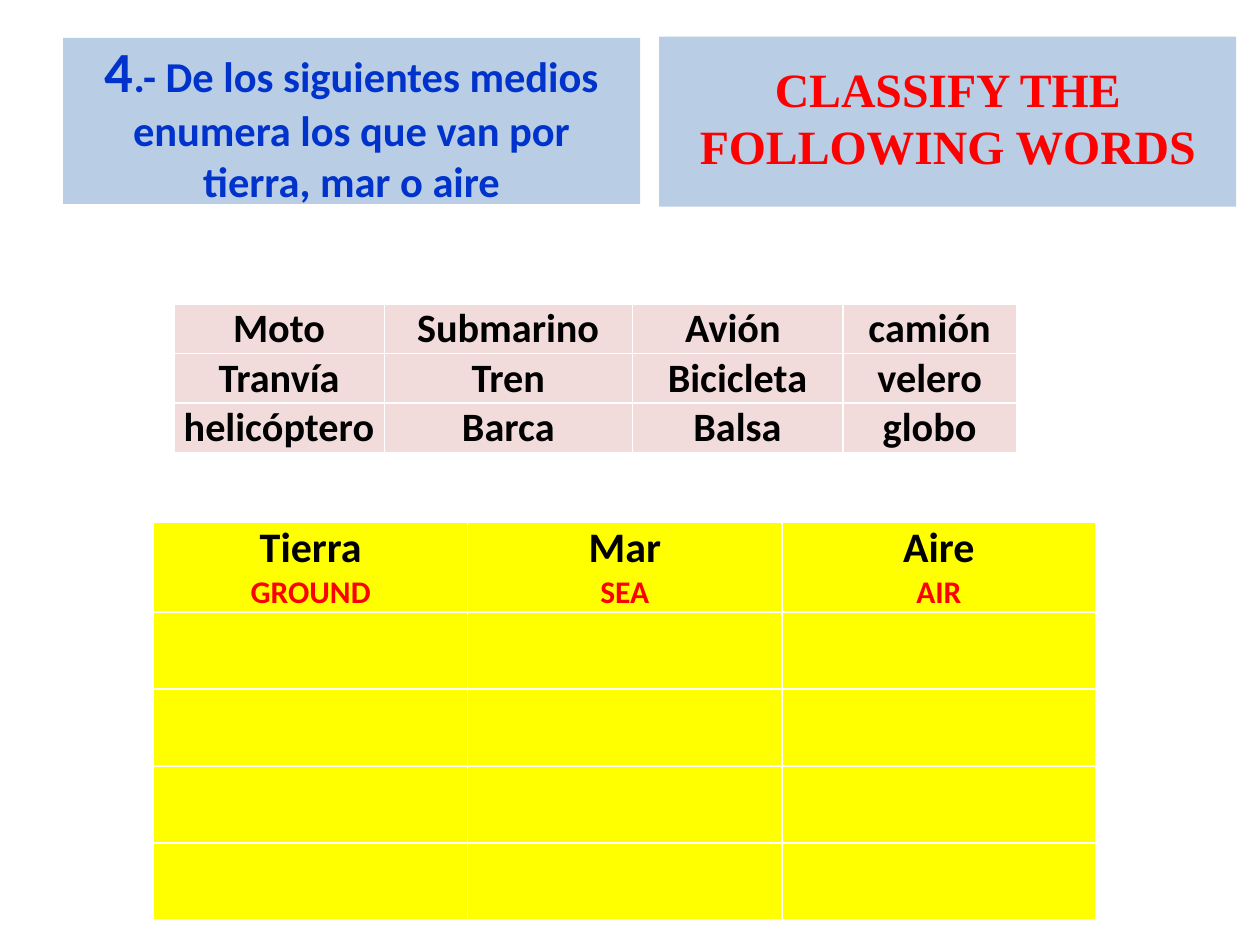
from pptx import Presentation
from pptx.dml.color import RGBColor
from pptx.enum import shapes, text
from pptx.util import Pt

BLUE = RGBColor(0x00, 0x33, 0xCC)
PALE_BLUE = RGBColor(0xB9, 0xCD, 0xE5)
PINK = RGBColor(0xF2, 0xDC, 0xDB)
YELLOW = RGBColor(0xFF, 0xFF, 0x00)
RED = RGBColor(0xFF, 0x00, 0x00)
BLACK = RGBColor(0x00, 0x00, 0x00)

BANNERS = [
    {
        "box": (36, 21.6, 329.8, 95),
        "bottom": 3.6,
        "runs": [
            ("4", 32.4, "Calibri", BLUE),
            (".- De los siguientes medios enumera los que van por tierra, mar o aire",
             24.3, "Calibri", BLUE),
        ],
    },
    {
        "box": (376.6, 20.9, 329.8, 97.2),
        "bottom": 9,
        "runs": [("CLASSIFY THE FOLLOWING WORDS", 27.3, "Times New Roman", RED)],
    },
]

WORDS = [
    ["Moto", "Submarino", "Avión ", "camión"],
    ["Tranvía", "Tren", "Bicicleta", "velero"],
    ["helicóptero", "Barca", "Balsa", "globo"],
]
CATEGORIES = [("Tierra", "GROUND"), ("Mar", "SEA"), ("Aire", "AIR")]
ANSWER_ROWS = 4


def write_paragraph(paragraph, runs):
    paragraph.alignment = text.PP_ALIGN.CENTER
    for wording, size, font_name, color in runs:
        run = paragraph.add_run()
        run.text = wording
        font_format = {"size": Pt(size), "name": font_name, "bold": True}
        for attribute, value in font_format.items():
            setattr(run.font, attribute, value)
        run.font.color.rgb = color


def add_banner(slide, banner):
    shape = slide.shapes.add_shape(
        shapes.MSO_SHAPE.RECTANGLE, *(Pt(length) for length in banner["box"]))
    shape.shadow.inherit = False
    shape.fill.solid()
    shape.fill.fore_color.rgb = PALE_BLUE
    shape.line.fill.background()
    frame = shape.text_frame
    frame_format = {
        "word_wrap": True,
        "vertical_anchor": text.MSO_ANCHOR.MIDDLE,
        "margin_bottom": Pt(banner["bottom"]),
    }
    for attribute, value in frame_format.items():
        setattr(frame, attribute, value)
    write_paragraph(frame.paragraphs[0], banner["runs"])


def add_grid(slide, left, top, widths, heights, rows, fill, header):
    table = slide.shapes.add_table(
        len(heights), len(widths), Pt(left), Pt(top),
        Pt(sum(widths)), Pt(sum(heights))).table
    table.first_row = header
    table.horz_banding = False
    for column, width in zip(table.columns, widths):
        column.width = Pt(width)
    margins = {"margin_left": 3.6, "margin_right": 3.6,
               "margin_top": 0, "margin_bottom": 0}
    for row, height, contents in zip(table.rows, heights, rows):
        row.height = Pt(height)
        for cell, lines in zip(row.cells, contents):
            cell.fill.solid()
            cell.fill.fore_color.rgb = fill
            for attribute, value in margins.items():
                setattr(cell, attribute, Pt(value))
            for index, line in enumerate(lines):
                frame = cell.text_frame
                paragraph = frame.add_paragraph() if index else frame.paragraphs[0]
                write_paragraph(paragraph, [line])


def main():
    presentation = Presentation()
    presentation.slide_width, presentation.slide_height = Pt(720), Pt(540)
    slide = presentation.slides.add_slide(presentation.slide_layouts[6])
    for banner in BANNERS:
        add_banner(slide, banner)

    word_rows = [[[(word, 23, "Calibri", BLACK)] for word in row] for row in WORDS]
    add_grid(slide, 99.4, 173.9, [120.2, 141.8, 120.2, 99.4],
             [28] * len(WORDS), word_rows, PINK, True)

    headings = [[(spanish, 24, "Calibri", BLACK), (english, 18, "Calibri", RED)]
                for spanish, english in CATEGORIES]
    empty_rows = [[[] for _ in CATEGORIES] for _ in range(ANSWER_ROWS)]
    add_grid(slide, 87.8, 298.4, [179.5] * len(CATEGORIES),
             [51] + [44] * ANSWER_ROWS, [headings] + empty_rows, YELLOW, False)

    presentation.save("out.pptx")


if __name__ == "__main__":
    main()
